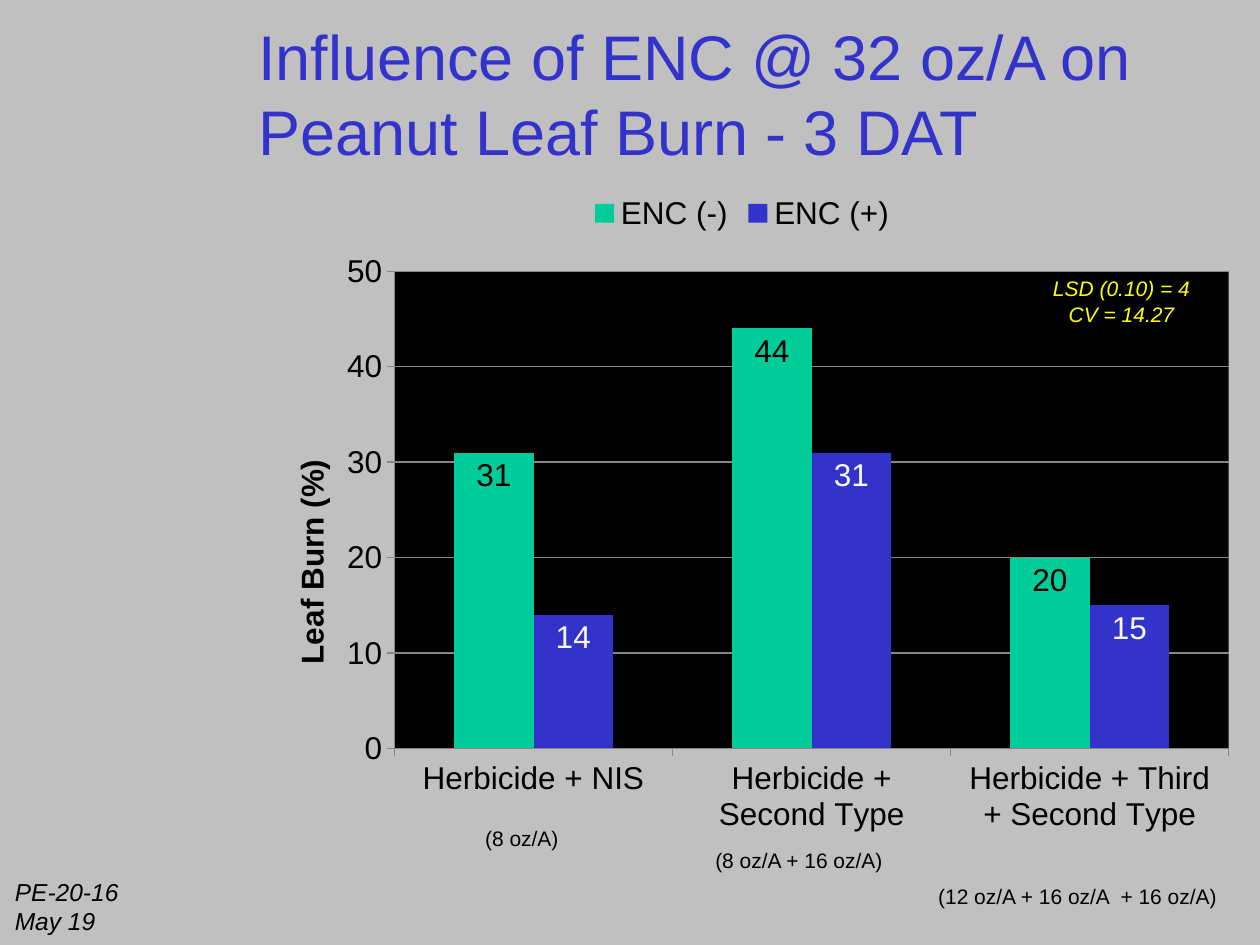
from lxml.etree import fromstring
from pptx import Presentation
from pptx.chart.data import CategoryChartData as ChartData
from pptx.dml.color import RGBColor as RGB
from pptx.enum.chart import (XL_CHART_TYPE as Kind, XL_LABEL_POSITION as Spot,
                             XL_LEGEND_POSITION as Side, XL_TICK_MARK as Tick)
from pptx.enum.text import MSO_ANCHOR as Anchor, PP_ALIGN as Align
from pptx.util import Cm, Pt

BLACK = RGB(0, 0, 0)
GREY = RGB(0xC0, 0xC0, 0xC0)
LINE = RGB(0x86, 0x86, 0x86)
BLUE = RGB(0x33, 0x33, 0xCC)
GREEN = RGB(0x00, 0xCC, 0x99)
YELLOW = RGB(0xFF, 0xFF, 0x00)
PALE = RGB(0xF8, 0xF8, 0xF8)
FACE = "Arial"

TITLE = "Influence of ENC @ 32 oz/A on Peanut Leaf Burn - 3 DAT"
MIXES = ["Herbicide + NIS", "Herbicide + Second Type", "Herbicide + Third + Second Type"]
SERIES = [("ENC (-)", [31, 44, 20], GREEN, BLACK),
          ("ENC (+)", [14, 31, 15], BLUE, PALE)]
NOTES = [
    (["LSD (0.10) = 4", "CV = 14.27"], (20.96, 5.44, 3.3, 1.27),
     dict(color=YELLOW, italic=True, align=Align.CENTER)),
    (["(8 oz/A)"], (9.53, 16.51, 2.01, 0.76), {}),
    (["(8 oz/A + 16 oz/A)"], (14.17, 16.97, 3.91, 0.76), {}),
    (["(12 oz/A + 16 oz/A  + 16 oz/A)"], (18.59, 17.68, 6.27, 0.76),
     dict(align=Align.CENTER, wrap=True)),
    (["PE-20-16", "May 19"], (0.05, 17.55, 2.62, 1.45), dict(size=14, italic=True)),
]
C = "http://schemas.openxmlformats.org/drawingml/2006/chart"
A = "http://schemas.openxmlformats.org/drawingml/2006/main"


def style(font, size=18, color=BLACK, bold=False, italic=False):
    font.name, font.size = FACE, Pt(size)
    font.bold, font.italic = bold, italic
    font.color.rgb = color


def write(frame, lines, size=12, color=BLACK, italic=False, align=Align.LEFT, wrap=False):
    frame.word_wrap = wrap
    frame.text = "\n".join(lines)
    for para in frame.paragraphs:
        para.alignment = align
        for run in para.runs:
            style(run.font, size, color, italic=italic)


def place(part, index, **spots):
    for old in part.findall(f"{{{C}}}layout"):
        part.remove(old)
    modes = "".join(f'<c:{k}Mode val="edge"/>' for k in "xy")
    sizes = "".join(f'<c:{k} val="{v}"/>' for k, v in spots.items())
    inner = '<c:layoutTarget val="inner"/>' if "w" in spots else ""
    part.insert(index, fromstring(
        f'<c:layout xmlns:c="{C}"><c:manualLayout>{inner}{modes}{sizes}'
        '</c:manualLayout></c:layout>'))


def draw_chart(slide):
    data = ChartData()
    data.categories = MIXES
    for name, vals, *_ in SERIES:
        data.add_series(name, vals)
    chart = slide.shapes.add_chart(Kind.COLUMN_CLUSTERED, Cm(4.95), Cm(3.63),
                                   Cm(20.02), Cm(14.15), data).chart
    style(chart.font)
    chart.has_title = False
    chart.has_legend = True
    legend = chart.legend
    legend.position, legend.include_in_layout = Side.TOP, False
    style(legend.font)

    plot = chart.plots[0]
    plot.gap_width, plot.overlap, plot.vary_by_categories = 150, 0, False
    for bar, (_, _, fill, ink) in zip(plot.series, SERIES):
        bar.format.fill.solid()
        bar.format.fill.fore_color.rgb = fill
        bar.invert_if_negative = False
        tags = bar.data_labels
        tags.show_value, tags.position = True, Spot.INSIDE_END
        style(tags.font, color=ink)

    vert = chart.value_axis
    vert.minimum_scale, vert.maximum_scale, vert.major_unit = 0, 50, 10
    vert.has_major_gridlines = True
    grid = vert.major_gridlines.format.line
    for axis in (vert, chart.category_axis):
        axis.major_tick_mark = Tick.OUTSIDE
        style(axis.tick_labels.font)
    for line in (grid, vert.format.line, chart.category_axis.format.line):
        line.color.rgb, line.width = LINE, Pt(0.75)
    head = vert.axis_title
    head.text_frame.text = "Leaf Burn (%)"
    style(head.text_frame.paragraphs[0].runs[0].font, bold=True)
    turn = head.text_frame._txBody.bodyPr
    turn.set("rot", "-5400000")
    turn.set("vert", "horz")

    area = chart._chartSpace.chart.plotArea
    area.append(fromstring(
        f'<c:spPr xmlns:c="{C}" xmlns:a="{A}"><a:solidFill>'
        f'<a:srgbClr val="{BLACK}"/></a:solidFill></c:spPr>'))
    place(area, 0, x=0.15, y=0.13, w=0.84, h=0.68)
    place(head._element, 1, x=0.04, y=0.39)


def main():
    deck = Presentation()
    deck.slide_width, deck.slide_height = Cm(25.4), Cm(19.05)
    slide = deck.slides.add_slide(deck.slide_layouts[5])
    slide.background.fill.solid()
    slide.background.fill.fore_color.rgb = GREY

    title = slide.shapes.title
    title.left, title.top, title.width, title.height = map(Cm, (4.95, 0.28, 20.24, 3.18))
    write(title.text_frame, [TITLE], size=36, color=BLUE, wrap=True)
    title.text_frame.vertical_anchor = Anchor.MIDDLE

    draw_chart(slide)
    for lines, spot, look in NOTES:
        box = slide.shapes.add_textbox(*map(Cm, spot))
        write(box.text_frame, lines, **look)
    deck.save("out.pptx")


if __name__ == "__main__":
    main()
